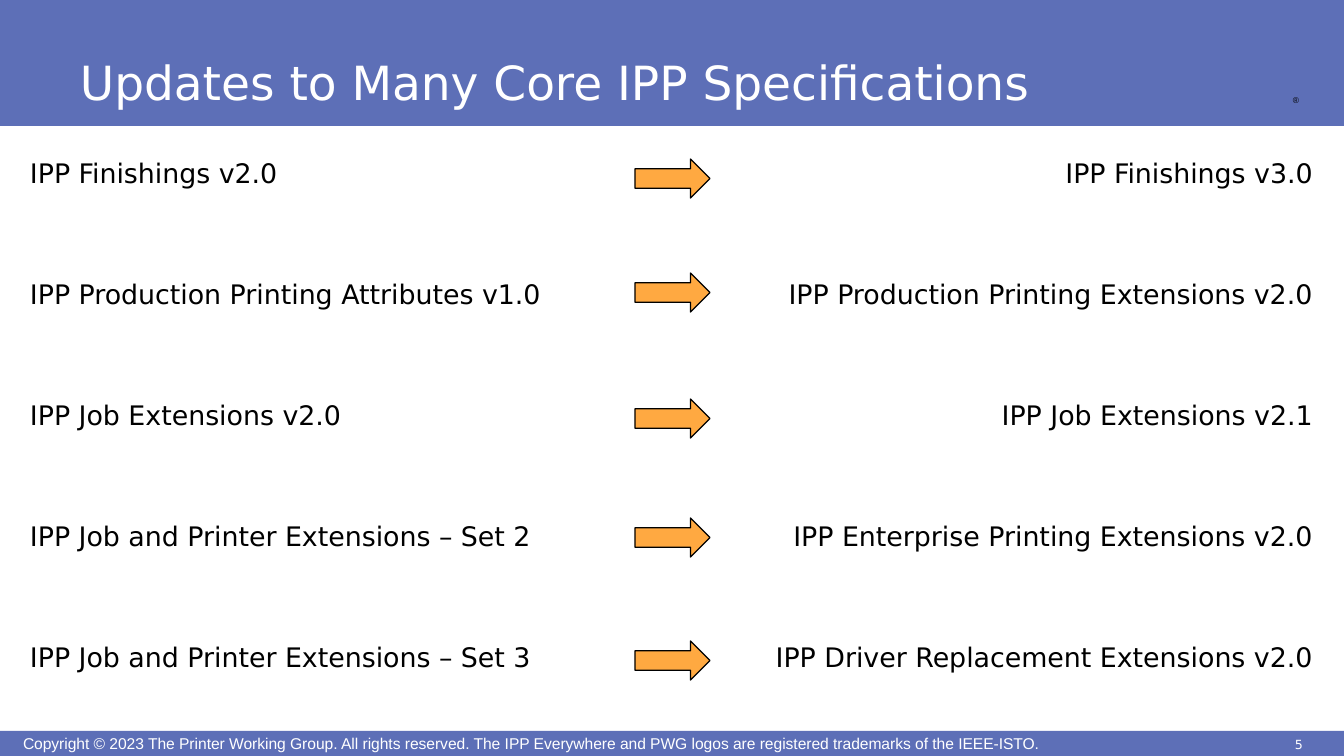
from pptx import Presentation
from pptx.dml.color import RGBColor
from pptx.enum.shapes import MSO_SHAPE
from pptx.enum.text import MSO_ANCHOR, PP_ALIGN
from pptx.util import Pt

PX = 7557  # EMU per pixel
THEME = {
    "band": RGBColor(0x5D, 0x6F, 0xB7),
    "arrow": RGBColor(0xFF, 0xA9, 0x41),
    "light": RGBColor(0xFF, 0xFF, 0xFF),
    "dark": RGBColor(0, 0, 0),
    "main_font": "DejaVu Sans",
    "small_font": "Arial",
    "title": Pt(28),
    "body": Pt(16),
    "footer": Pt(9.3),
    "number": Pt(7.5),
    "mark": Pt(5),
    "row_gap": Pt(52.8),
    "outline": Pt(0.75),
}

UPDATES = [
    ("IPP Finishings v2.0", "IPP Finishings v3.0", 159),
    ("IPP Production Printing Attributes v1.0", "IPP Production Printing Extensions v2.0", 273),
    ("IPP Job Extensions v2.0", "IPP Job Extensions v2.1", 399),
    ("IPP Job and Printer Extensions – Set 2", "IPP Enterprise Printing Extensions v2.0", 518),
    ("IPP Job and Printer Extensions – Set 3", "IPP Driver Replacement Extensions v2.0", 641),
]
old_specs, new_specs, arrow_tops = zip(*UPDATES)

prs = Presentation()
prs.slide_width, prs.slide_height = 1344 * PX, 756 * PX
slide = prs.slides.add_slide(prs.slide_layouts[6])


def add_filled(kind, box, color):
    shape = slide.shapes.add_shape(kind, *(n * PX for n in box))
    shape.shadow.inherit = False
    shape.fill.solid()
    shape.fill.fore_color.rgb = color
    shape.line.fill.background()
    return shape


def add_text(lines, box, size, color, font="main_font", side=12, edge=7,
             align=PP_ALIGN.LEFT, anchor=MSO_ANCHOR.TOP, wrap=True):
    """Add one paragraph per line; side and edge are the insets in px."""
    frame = slide.shapes.add_textbox(*(n * PX for n in box)).text_frame
    frame.word_wrap = wrap
    frame.vertical_anchor = anchor
    frame.margin_left = frame.margin_right = side * PX
    frame.margin_top = frame.margin_bottom = edge * PX
    for i, line in enumerate(lines):
        paragraph = frame.add_paragraph() if i else frame.paragraphs[0]
        paragraph.alignment = align
        if i:
            paragraph.space_before = THEME["row_gap"]
        run = paragraph.add_run()
        run.text = line
        run.font.name = THEME[font]
        run.font.size = THEME[size]
        run.font.color.rgb = THEME[color]


for band in ((0, 731, 1344, 25), (0, 0, 1344, 126)):
    add_filled(MSO_SHAPE.RECTANGLE, band, THEME["band"])

add_text(["Copyright © 2023 The Printer Working Group. All rights reserved. "
          "The IPP Everywhere and PWG logos are registered trademarks of the IEEE-ISTO."],
         (18, 734, 1257, 19), "footer", "light", "small_font",
         side=5, edge=0, anchor=MSO_ANCHOR.MIDDLE)
add_text(["®"], (1280, 90, 33, 22), "mark", "dark", "small_font",
         side=13, edge=6, wrap=False)
add_text(["Updates to Many Core IPP Specifications"], (68, 5, 1113, 112),
         "title", "light", anchor=MSO_ANCHOR.BOTTOM)
add_text(["5"], (1257, 731, 84, 25), "number", "light", edge=6,
         align=PP_ALIGN.CENTER)

add_text(old_specs, (18, 150, 629, 566), "body", "dark")
add_text(new_specs, (696, 150, 629, 566), "body", "dark", align=PP_ALIGN.RIGHT)

for top in arrow_tops:
    arrow = add_filled(MSO_SHAPE.RIGHT_ARROW, (635, top, 75, 39), THEME["arrow"])
    arrow.line.color.rgb = THEME["dark"]
    arrow.line.width = THEME["outline"]

prs.save("out.pptx")
